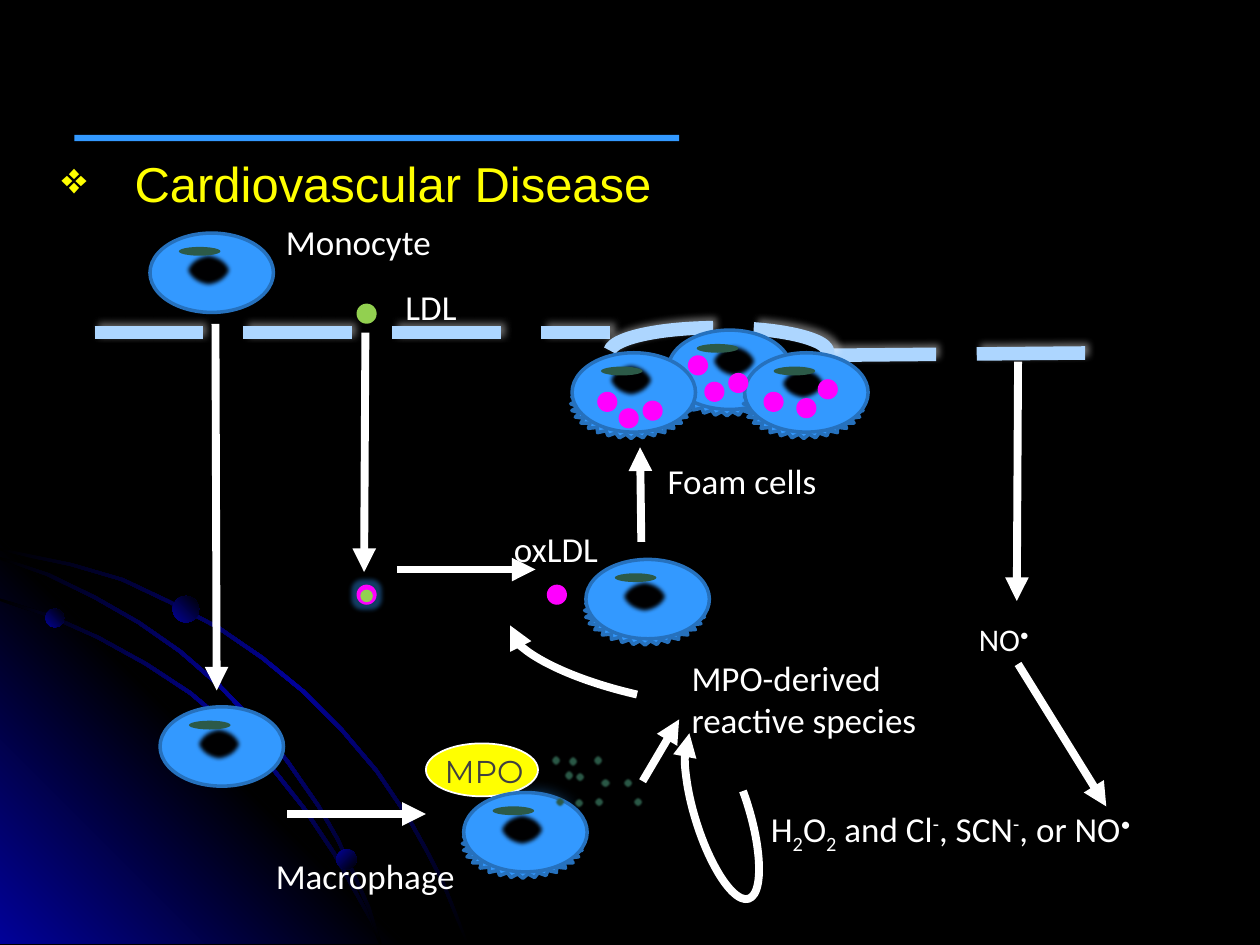
from lxml import etree
from pptx import Presentation
from pptx.dml.color import RGBColor
from pptx.enum.shapes import MSO_CONNECTOR, MSO_SHAPE as SHAPE
from pptx.oxml import parse_xml
from pptx.oxml.ns import nsdecls, qn
from pptx.util import Pt

PX = 9144  # 100 px to the inch
BLACK = RGBColor(0x00, 0x00, 0x00)
WHITE = RGBColor(0xFF, 0xFF, 0xFF)
YELLOW = RGBColor(0xFF, 0xFF, 0x00)
NAVY = RGBColor(0x01, 0x01, 0x99)
BLUE = RGBColor(0x33, 0x99, 0xFF)
EDGE = RGBColor(0x26, 0x71, 0xBD)
MEMBRANE = RGBColor(0xAD, 0xD6, 0xFF)
GREEN = RGBColor(0x92, 0xD0, 0x50)
DARK_GREEN = RGBColor(0x2C, 0x5A, 0x48)
MAGENTA = RGBColor(0xFF, 0x00, 0xFF)
GRAY = RGBColor(0x40, 0x40, 0x40)
SOFT = '<a:softEdge %s rad="{}"/>' % nsdecls("a")
GLOW = ('<a:glow %s rad="63500"><a:srgbClr val="3399FF"><a:alpha val="40000"/>'
        '</a:srgbClr></a:glow>' % nsdecls("a"))
WHITE_SHADOW = ('<a:outerShdw %s blurRad="50800" dist="38100" dir="18900000">'
                '<a:srgbClr val="FFFFFF"><a:alpha val="40000"/></a:srgbClr>'
                '</a:outerShdw>' % nsdecls("a"))

presentation = Presentation()
presentation.slide_width, presentation.slide_height = 1000 * PX, 750 * PX
slide = presentation.slides.add_slide(presentation.slide_layouts[6])
slide.background.fill.solid()
slide.background.fill.fore_color.rgb = BLACK
shapes = slide.shapes


def style(shape, fill=None, line=None, width=2, effect=None, angle=45, line_end=None):
    """Fill is one colour, a list of gradient colours or None."""
    properties = shape.element.spPr
    if line is None:
        shape.line.fill.background()
    else:
        shape.line.color.rgb = line
        shape.line.width = Pt(width)
    if line_end == "arrow":
        etree.SubElement(shape.line._get_or_add_ln(), qn("a:tailEnd"), type="triangle")
    elif line_end == "dash":
        etree.SubElement(shape.line._get_or_add_ln(), qn("a:prstDash"), val="lgDash")
    if isinstance(fill, list):
        shape.fill.gradient()
        shape.fill.gradient_angle = 360 - angle
        stops = properties.find(".//" + qn("a:gsLst"))
        for stop in list(stops):
            stops.remove(stop)
        for i, color in enumerate(fill):
            stop = etree.SubElement(stops, qn("a:gs"), pos=str(100000 * i // (len(fill) - 1)))
            etree.SubElement(stop, qn("a:srgbClr"), val=str(color))
    elif fill is not None:
        shape.fill.solid()
        shape.fill.fore_color.rgb = fill
    elif hasattr(shape, "fill"):
        shape.fill.background()
    effects = etree.SubElement(properties, qn("a:effectLst"))
    if effect:
        effects.append(parse_xml(effect))
    return shape


def add(kind, left, top, width, height, *args, **options):
    shape = shapes.add_shape(kind, left * PX, top * PX, width * PX, height * PX)
    return style(shape, *args, **options)


# Corner glow and sweeping curves
corner = shapes.build_freeform(0, 427, scale=PX)
corner.add_line_segments([(322, 749), (0, 749)])
style(corner.convert_to_shape(), [NAVY, BLACK, NAVY], angle=315)
curves = [
    [(0, 435), (28, 441), (57, 447), (98, 459), (136, 477), (174, 497), (209, 521), (242, 548),
     (272, 578), (300, 611), (325, 648), (339, 673), (352, 698), (362, 723), (372, 749)],
    [(0, 475), (41, 488), (79, 505), (117, 526), (152, 549), (184, 576), (215, 606),
     (242, 640), (266, 676), (286, 712), (296, 730), (303, 749)],
    [(0, 442), (39, 455), (76, 473), (111, 493), (144, 516), (175, 543), (204, 573),
     (229, 603), (254, 639), (269, 665), (282, 693), (294, 720), (303, 749)],
]
for curve in curves:
    outline = shapes.build_freeform(*curve[0], scale=PX)
    outline.add_line_segments(curve[1:] + [(x - 2 if x else 0, min(y + 2, 749))
                                           for x, y in reversed(curve)])
    style(outline.convert_to_shape(), [BLACK, NAVY, BLACK])
for left, top, size, angle in [(36, 483, 15, 315), (267, 674, 16, 45), (137, 473, 21, 315)]:
    add(SHAPE.OVAL, left, top, size, size, [NAVY, BLACK], angle=angle)

# Title rule, MPO badge
add(SHAPE.OVAL, 338, 590, 89, 42, YELLOW, WHITE, 1)
add(SHAPE.RECTANGLE, 59, 107, 480, 5, BLUE)

# Vessel wall
for x1, y1, x2, y2 in [(75, 264, 484, 264), (657, 282, 878, 280)]:
    wall = shapes.add_connector(MSO_CONNECTOR.STRAIGHT, x1 * PX, y1 * PX, x2 * PX, y2 * PX)
    style(wall, line=MEMBRANE, width=7.75, effect=WHITE_SHADOW, line_end="dash")
bulge = add(SHAPE.ARC, 484, 260, 173, 39, None, MEMBRANE, 7.75, WHITE_SHADOW, line_end="dash")
bulge.adjustments[0], bulge.adjustments[1] = 108.49, 0.79

# Cells: left, top, spiky underside, nucleus offset
add(SHAPE.OVAL, 378, 614, 98, 63, BLUE, effect=SOFT.format(158750))
cells = [
    (119, 185, False, 27, 15), (127, 561, False, 27, 15), (368, 629, True, 27, 15),
    (530, 262, True, 33, 10), (591, 280, True, 27, 10), (465, 444, True, 27, 15),
    (454, 280, True, 27, 7),
]
for left, top, spiky, dx, dy in cells:
    if spiky:
        spikes = add(SHAPE.STAR_32_POINT, left - 1, top + 13, 96, 55, BLUE, EDGE)
        spikes.adjustments[0] = 0.44
    add(SHAPE.OVAL, left, top, 98, 63, BLUE, EDGE)
    add(SHAPE.OVAL, left + dx, top + dy, 39, 29, BLACK, effect=SOFT.format(31750))
    add(SHAPE.OVAL, left + 23, top + 11, 33, 7, DARK_GREEN)

# Released granules
granules = [(437, 599), (470, 599), (455, 633), (440, 632), (471, 632), (494, 617),
            (502, 632), (456, 612), (476, 617), (447, 611), (450, 600)]
for left, top in granules:
    add(SHAPE.OVAL, left, top, 9, 9, DARK_GREEN, effect=SOFT.format(12700))

# LDL and oxidised LDL particles
add(SHAPE.OVAL, 283, 241, 16, 16, GREEN)
add(SHAPE.OVAL, 283, 464, 16, 16, MAGENTA, effect=GLOW)
add(SHAPE.OVAL, 286, 468, 10, 10, GREEN)
for left, top in [(434, 464), (474, 311), (491, 324), (606, 311), (546, 282), (559, 303),
                  (510, 318), (578, 296), (632, 316), (649, 301)]:
    add(SHAPE.OVAL, left, top, 16, 16, MAGENTA)

# Arrows
arrows = [(171, 257, 172, 548), (228, 646, 338, 646), (290, 264, 289, 454),
          (315, 452, 425, 452), (509, 430, 508, 355), (510, 620, 539, 571),
          (808, 287, 807, 477), (808, 527, 878, 640)]
for x1, y1, x2, y2 in arrows:
    arrow = shapes.add_connector(MSO_CONNECTOR.STRAIGHT, x1 * PX, y1 * PX, x2 * PX, y2 * PX)
    style(arrow, line=WHITE, width=4.5, line_end="arrow")
hook = add(SHAPE.ARC, 502, 624, 142, 43, None, WHITE, 4.5, line_end="arrow")
hook.rotation = 252.7
hook.adjustments[0], hook.adjustments[1] = 36.28, 213.09
bend = add(SHAPE.ARC, 402, 490, 221, 62, None, WHITE, 4.5, line_end="arrow")
bend.rotation = 192.9

# Text: left, top, width, height, size, font, colour, runs with baseline in percent
texts = [
    (39, 117, 988, 63, 28, "Arial", YELLOW, [("Cardiovascular Disease", 0)]),
    (217, 170, 175, 44, 20, "Calibri", WHITE, [("Monocyte", 0)]),
    (312, 222, 134, 44, 20, "Calibri", WHITE, [("LDL", 0)]),
    (343, 592, 94, 40, 18, "Montserrat", GRAY, [("MPO", 0)]),
    (539, 516, 213, 77, 20, "Calibri", WHITE, [("MPO-derived reactive species", 0)]),
    (767, 487, 134, 40, 18, "Calibri", WHITE, [("NO", 0), ("•", 30)]),
    (602, 636, 323, 77, 20, "Calibri", WHITE,
     [("H", 0), ("2", -25), ("O", 0), ("2", -25), (" and Cl", 0), ("-", 30),
      (", SCN", 0), ("-", 30), (", or NO", 0), ("•", 30)]),
    (520, 360, 175, 44, 20, "Calibri", WHITE, [("Foam cells", 0)]),
    (398, 414, 134, 44, 20, "Calibri", WHITE, [("oxLDL", 0)]),
    (209, 673, 175, 44, 20, "Calibri", WHITE, [("Macrophage", 0)]),
]
for left, top, width, height, size, font, color, runs in texts:
    box = shapes.add_textbox(left * PX, top * PX, width * PX, height * PX)
    box.text_frame.word_wrap = True
    paragraph = box.text_frame.paragraphs[0]
    if color == YELLOW:  # the bulleted heading
        bullet = paragraph._p.get_or_add_pPr()
        bullet.set("marL", str(58 * PX))
        bullet.set("indent", str(-58 * PX))
        bullet_color = etree.SubElement(bullet, qn("a:buClr"))
        etree.SubElement(bullet_color, qn("a:srgbClr"), val=str(YELLOW))
        etree.SubElement(bullet, qn("a:buSzPct"), val="90000")
        etree.SubElement(bullet, qn("a:buChar"), char="❖")
    paragraph.font.size = Pt(size)
    paragraph.font.name = font
    paragraph.font.color.rgb = color
    for text, baseline in runs:
        run = paragraph.add_run()
        run.text = text
        if baseline:
            run._r.get_or_add_rPr().set("baseline", str(baseline * 1000))

presentation.save("out.pptx")
